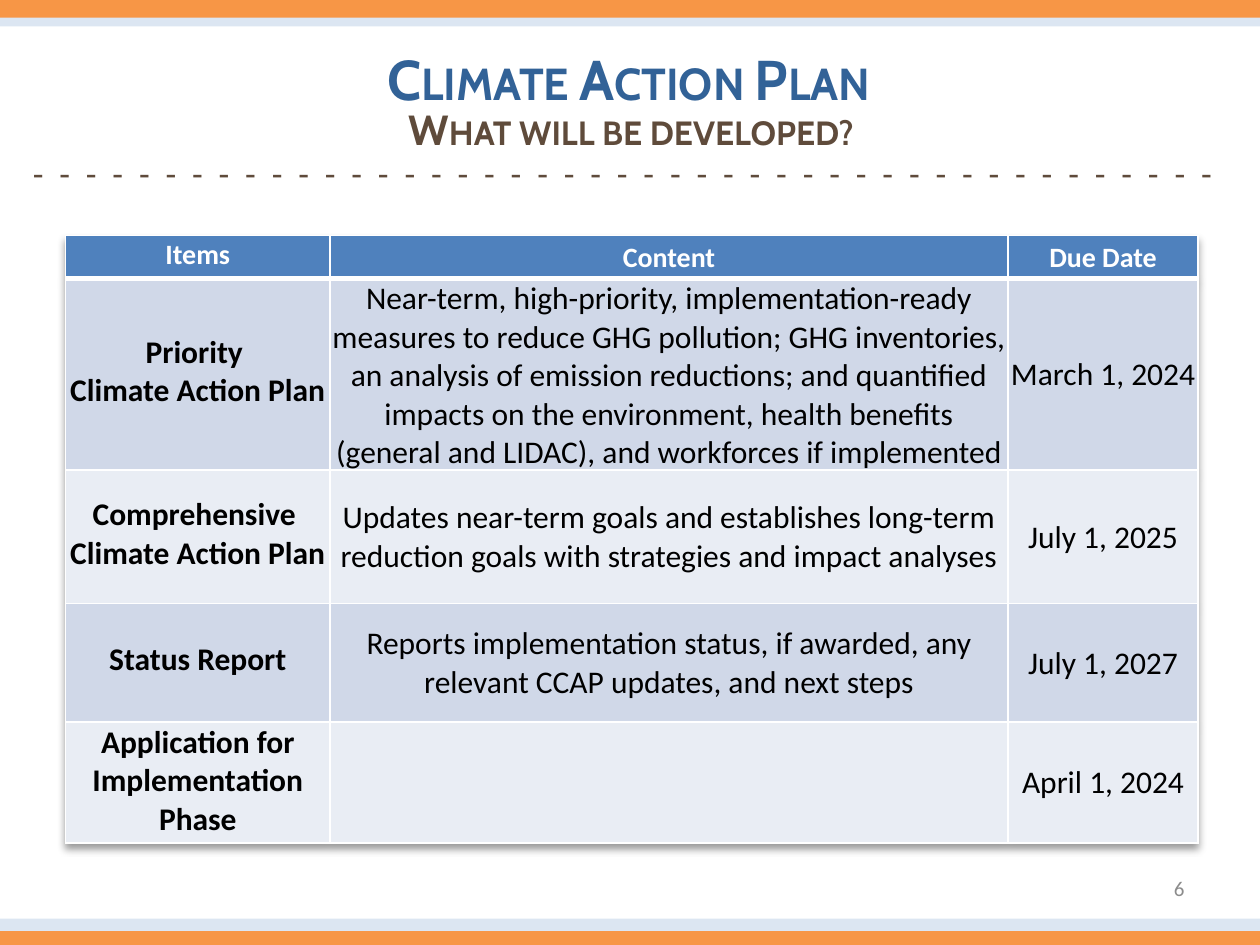
from lxml import etree
from pptx import Presentation, util as u
from pptx.dml.color import RGBColor
from pptx.enum import shapes, text
from pptx.oxml import parse_xml
from pptx.oxml.ns import nsdecls, qn

W, H = 10, 7.5
BLUE, BROWN, ORANGE, PALE = "326297", "5F4B3B", "F79646", "DCE6F2"
HEAD_FILL, BAND_FILLS = "4F81BD", ("D0D8E8", "E9EDF4")

# Content
TITLE, SUBTITLE, PAGE = "Climate Action Plan", "What will be developed?", "6"
NBSP = chr(160)
DIVIDER = (f"-{NBSP} " * 8 + f"-{NBSP}{NBSP}") * 5
ROWS = [
    ("Items", "Content", "Due Date"),
    ("Priority \vClimate Action Plan",
     "Near-term, high-priority, implementation-ready measures to reduce GHG pollution; "
     "GHG inventories, an analysis of emission reductions; and quantified impacts on the "
     "environment, health benefits (general and LIDAC), and workforces if implemented",
     "March 1, 2024"),
    ("Comprehensive \vClimate Action Plan",
     "Updates near-term goals and establishes long-term reduction goals with strategies "
     "and impact analyses", "July 1, 2025"),
    ("Status Report",
     "Reports implementation status, if awarded, any relevant CCAP updates, and next steps",
     "July 1, 2027"),
    ("Application for Implementation Phase", "", "April 1, 2024"),
]
COL_WIDTHS = (2.1, 5.38, 1.51)
ROW_HEIGHTS = (0.34, 1.52, 1.06, 0.94, 0.94)
BANDS = [(H - 0.21, 0.11, PALE), (H - 0.11, 0.14, ORANGE),
         (0.1, 0.11, PALE), (0, 0.14, ORANGE)]


def rgb(color):
    return RGBColor.from_string(color)


def write(tf, content, size, color, font="Calibri", bold=False, small_caps=False,
          align=text.PP_ALIGN.CENTER, before=0):
    tf.text = content
    p = tf.paragraphs[0]
    p.alignment, p.space_before = align, u.Pt(before)
    p.font.size = u.Pt(size)
    for r in p.runs:
        f = r.font
        f.name, f.size, f.bold = font, u.Pt(size), bold
        f.color.rgb = rgb(color)
        if small_caps:
            r._r.get_or_add_rPr().set("cap", "small")


def text_box(s, box, *args, anchor=text.MSO_ANCHOR.TOP, **style):
    tf = s.shapes.add_textbox(*map(u.Inches, box)).text_frame
    tf.word_wrap, tf.vertical_anchor = True, anchor
    write(tf, *args, **style)


def set_borders(cell, bottom):
    tcPr = cell._tc.get_or_add_tcPr()
    for i, (side, width) in enumerate((("L", 1), ("R", 1), ("T", 1), ("B", bottom))):
        tcPr.insert(i, parse_xml(
            f'<a:ln{side} {nsdecls("a")} w="{u.Pt(width)}"><a:solidFill>'
            f'<a:srgbClr val="FFFFFF"/></a:solidFill></a:ln{side}>'))


def add_plan_table(s):
    frame = s.shapes.add_table(len(ROWS), len(COL_WIDTHS), u.Inches(0.52), u.Inches(1.87),
                               u.Inches(sum(COL_WIDTHS)), u.Inches(sum(ROW_HEIGHTS)))
    table = frame.table
    for col, width in zip(table.columns, COL_WIDTHS):
        col.width = u.Inches(width)
    for row, height in zip(table.rows, ROW_HEIGHTS):
        row.height = u.Inches(height)
    for i, row in enumerate(ROWS):
        head = i == 0
        for j, content in enumerate(row):
            cell = table.cell(i, j)
            cell.fill.solid()
            cell.fill.fore_color.rgb = rgb(HEAD_FILL if head else BAND_FILLS[(i - 1) % 2])
            cell.vertical_anchor = text.MSO_ANCHOR.MIDDLE
            cell.margin_left = cell.margin_right = cell.margin_top = u.Inches(0.01)
            cell.margin_bottom = u.Inches(0 if j else 0.05)
            write(cell.text_frame, content, 16 if head else 18,
                  "FFFFFF" if head else "000000", bold=head or j == 0)
            set_borders(cell, 3 if head else 1)
    # Soft shadow below the table
    tblPr = table._tbl.tblPr
    tblPr.insert(0, parse_xml(
        f'<a:effectLst {nsdecls("a")}><a:outerShdw blurRad="50800" dist="38100" dir="5400000">'
        '<a:srgbClr val="000000"><a:alpha val="40000"/></a:srgbClr>'
        '</a:outerShdw></a:effectLst>'))


def main():
    prs = Presentation()
    prs.slide_width, prs.slide_height = u.Inches(W), u.Inches(H)
    s = prs.slides.add_slide(prs.slide_layouts[5])

    # Top and bottom bands
    for top, height, color in BANDS:
        sp = s.shapes.add_shape(shapes.MSO_SHAPE.RECTANGLE, 0, u.Inches(top),
                                u.Inches(W), u.Inches(height))
        sp.shadow.inherit = False
        sp.fill.solid()
        sp.fill.fore_color.rgb = rgb(color)
        sp.line.fill.background()

    # Title, subtitle and divider
    title = s.shapes.title
    title.left, title.top, title.width, title.height = map(u.Inches, (-0.01, 0.3, W, 0.64))
    title.text_frame.vertical_anchor = text.MSO_ANCHOR.TOP
    title.text_frame.auto_size = text.MSO_AUTO_SIZE.NONE
    write(title.text_frame, TITLE, 32, BLUE, font="Cabin", bold=True, small_caps=True)
    text_box(s, (0.01, 0.77, W, 0.47), SUBTITLE, 24, BROWN, font="Cabin",
             bold=True, small_caps=True, before=4.8)
    text_box(s, (0.01, 1.15, W, 0.94), DIVIDER, 20, BROWN, before=12)

    add_plan_table(s)

    # Slide number
    text_box(s, (7.17, 6.85, 2.33, 0.4), PAGE, 12, "8C8C8C",
             align=text.PP_ALIGN.RIGHT, anchor=text.MSO_ANCHOR.MIDDLE)
    prs.save("out.pptx")


if __name__ == "__main__":
    main()
